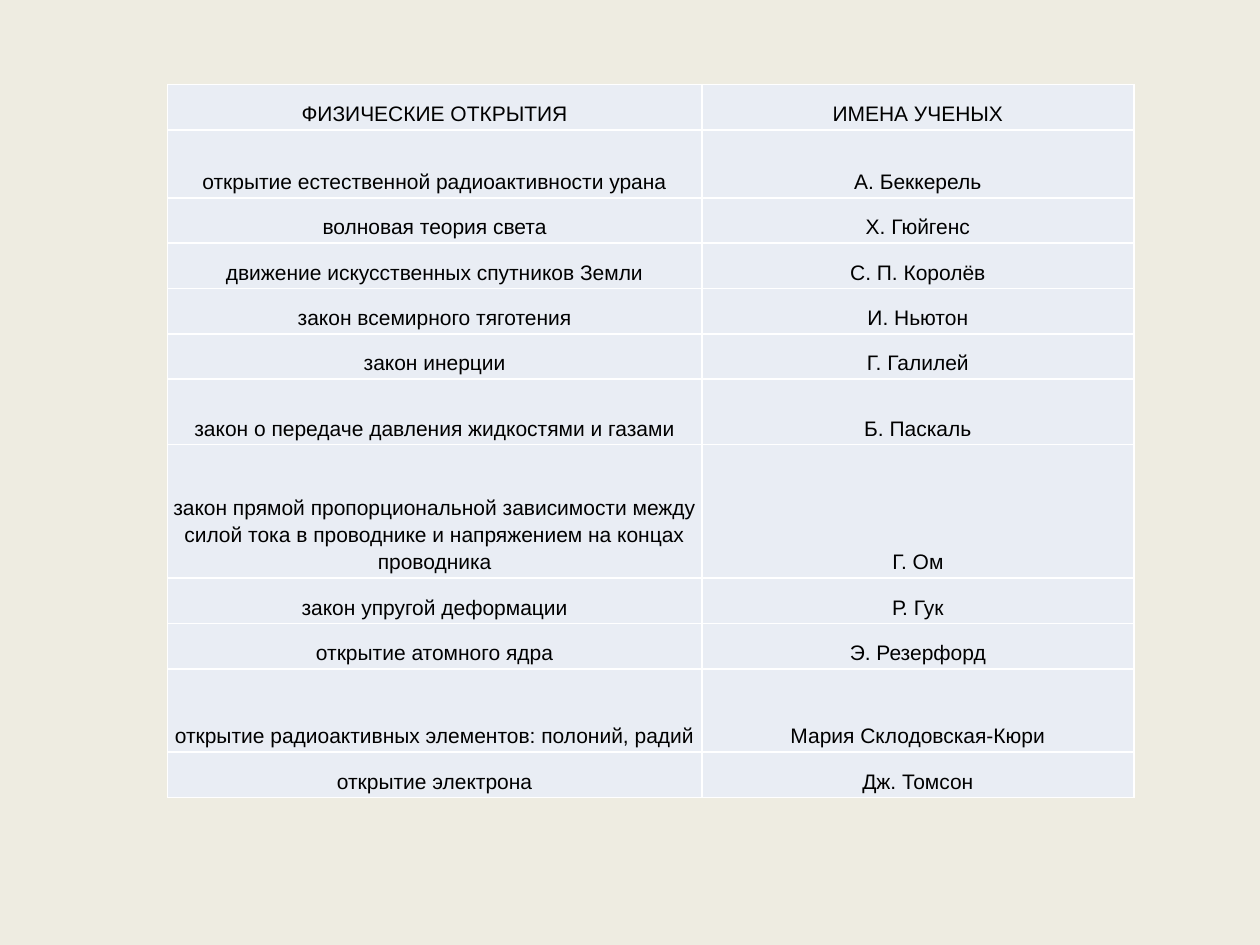
from lxml.etree import SubElement as Sub
from pptx import Presentation
from pptx.dml.color import RGBColor as Rgb
from pptx.enum.text import MSO_ANCHOR as Anchor, PP_ALIGN as Align
from pptx.oxml.ns import qn
from pptx.util import Pt

PX = 914400 // 100
COLORS = {"back": "EEECE1", "cell": "E9EDF4", "line": "FFFFFF", "text": "000000"}
WIDTHS = [424, 343]
ROWS = [
    (36, "ФИЗИЧЕСКИЕ ОТКРЫТИЯ", "ИМЕНА УЧЕНЫХ"),
    (54, "открытие естественной радиоактивности урана", "А. Беккерель"),
    (36, "волновая теория света", "Х. Гюйгенс"),
    (36, "движение искусственных спутников Земли", "С. П. Королёв"),
    (36, "закон всемирного тяготения", "И. Ньютон"),
    (36, "закон инерции", "Г. Галилей"),
    (52, "закон о передаче давления жидкостями и газами", "Б. Паскаль"),
    (106, "закон прямой пропорциональной зависимости между силой тока "
          "в проводнике и напряжением на концах проводника", "Г. Ом"),
    (36, "закон упругой деформации", "Р. Гук"),
    (36, "открытие атомного ядра", "Э. Резерфорд"),
    (66, "открытие радиоактивных элементов: полоний, радий", "Мария Склодовская-Кюри"),
    (36, "открытие электрона", "Дж. Томсон"),
]


def add_lines(cell):
    props = cell._tc.get_or_add_tcPr()
    for side in ("lnL", "lnR", "lnT", "lnB"):
        line = Sub(props, qn(f"a:{side}"), w=str(Pt(1)))
        fill = Sub(line, qn("a:solidFill"))
        Sub(fill, qn("a:srgbClr"), val=COLORS["line"])


deck = Presentation()
deck.slide_width, deck.slide_height = 1000 * PX, 750 * PX
slide = deck.slides.add_slide(deck.slide_layouts[6])
back = slide.background.fill
back.solid()
back.fore_color.rgb = Rgb.from_string(COLORS["back"])

high = sum(row[0] for row in ROWS)
frame = slide.shapes.add_table(len(ROWS), len(WIDTHS), 133 * PX, 67 * PX,
                               sum(WIDTHS) * PX, high * PX)
table = frame.table
table.first_row = table.horz_banding = False
for col, width in zip(table.columns, WIDTHS):
    col.width = width * PX

for row, (height, *texts) in zip(table.rows, ROWS):
    row.height = height * PX
    for cell, text in zip(row.cells, texts):
        add_lines(cell)
        cell.fill.solid()
        cell.fill.fore_color.rgb = Rgb.from_string(COLORS["cell"])
        cell.vertical_anchor = Anchor.BOTTOM
        cell.margin_left = cell.margin_right = 3 * PX
        cell.margin_top = cell.margin_bottom = 3 * PX
        cell.text = text
        para = cell.text_frame.paragraphs[0]
        para.alignment = Align.CENTER
        para.line_spacing = 1.15
        run = para.runs[0]
        run.font.name = "Arial"
        run.font.size = Pt(12)
        run.font.color.rgb = Rgb.from_string(COLORS["text"])

deck.save("out.pptx")
